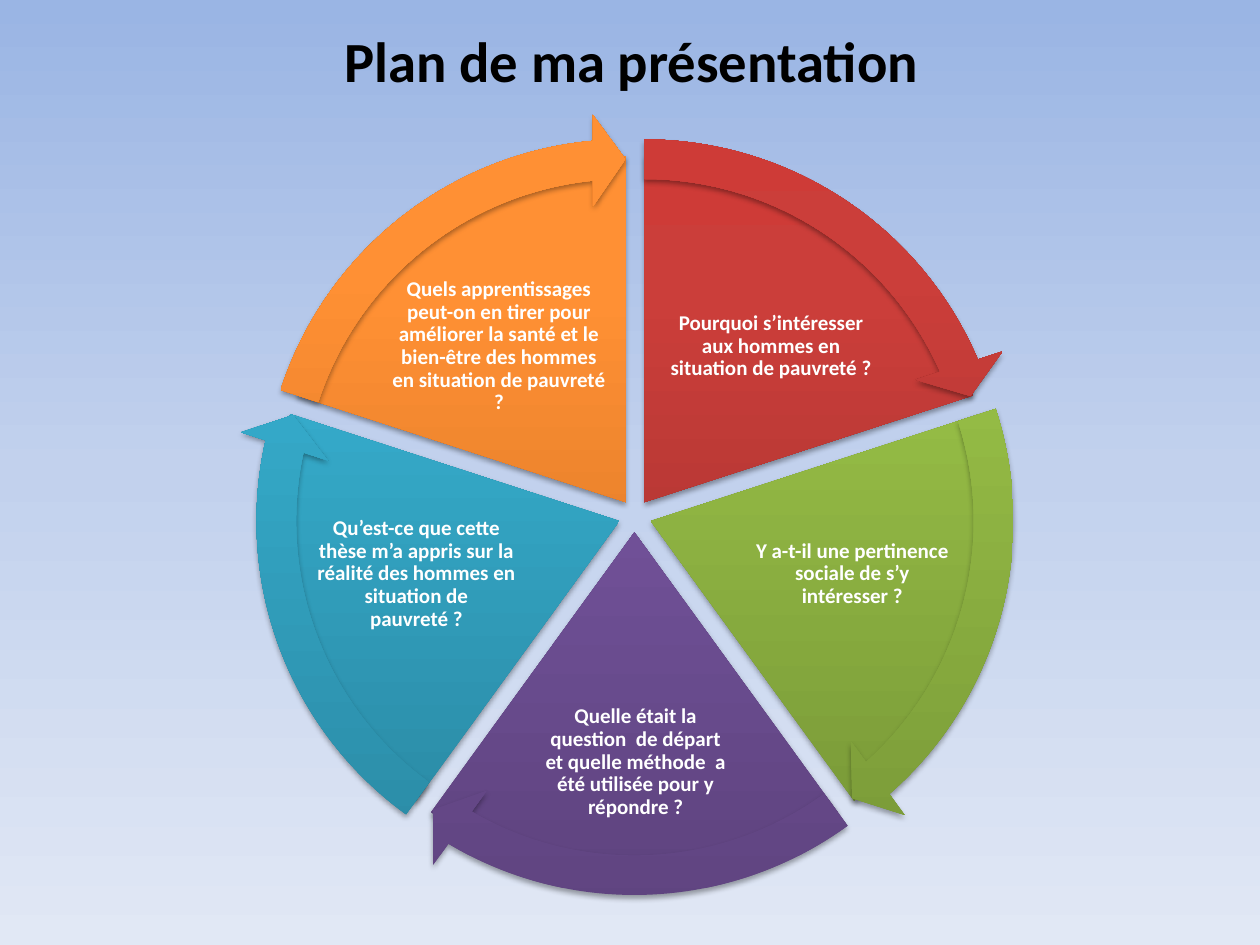
from lxml.etree import SubElement
from pptx import Presentation
from pptx.dml.color import RGBColor
from pptx.enum.shapes import MSO_SHAPE
from pptx.enum.text import MSO_ANCHOR, MSO_AUTO_SIZE, PP_ALIGN
from pptx.oxml.ns import qn
from pptx.util import Inches, Pt

COLORS = {"title": "000000", "label": "FFFFFF", "shadow": "000000"}
GRADIENTS = {
    "background": [(0, "9AB5E4"), (50, "C2D1ED"), (100, "E1E8F5")],
    "red": [(0, "9C2F2D"), (80, "CB3E3A"), (100, "CE3B37")],
    "green": [(0, "779737"), (80, "9BC348"), (100, "9DC746")],
    "purple": [(0, "5F4480"), (80, "7B58A6"), (100, "7C57A8")],
    "blue": [(0, "2A88A2"), (80, "37B1D2"), (100, "34B4D6")],
    "orange": [(0, "CC6E20"), (80, "FF9034"), (100, "FF9136")],
}

# Adjustment values count degrees times 0.6, so a full turn is 216.
FULL_TURN = 216
SWEEP = FULL_TURN / 5
TOP_ANGLE = 162
PIE_SIZE = 5.49
ARROW_SIZE = 6.17
ARROW_MARGIN = (ARROW_SIZE - PIE_SIZE) / 2
HEAD_ANGLE = 3.275

# Gradient, wedge position, label box, label
STEPS = [
    ("red", (2.37, 1.24), (5.24, 2.16, 1.76, 1.18),
     "Pourquoi s’intéresser aux hommes en situation de pauvreté ?"),
    ("green", (2.42, 1.39), (5.95, 3.9, 1.63, 1.31),
     "Y a-t-il une pertinence sociale de s’y intéresser ?"),
    ("purple", (2.29, 1.48), (4.26, 5.33, 1.57, 1.44),
     "Quelle était la question  de départ et quelle méthode  a été "
     "utilisée pour y répondre ?"),
    ("blue", (2.17, 1.39), (2.49, 3.9, 1.63, 1.31),
     "Qu’est-ce que cette thèse m’a appris sur la réalité des hommes en "
     "situation de pauvreté ?"),
    ("orange", (2.22, 1.24), (3.08, 2.16, 1.76, 1.18),
     "Quels apprentissages peut-on en tirer pour améliorer la santé et le "
     "bien-être des hommes en situation de pauvreté ?"),
]


def set_gradient(fill, element, stops, angle):
    """Fill with a linear gradient; angle is counter-clockwise."""
    fill.gradient()
    fill.gradient_angle = angle
    stop_list = element.find(".//" + qn("a:gsLst"))
    stop_list.clear()
    for position, color in stops:
        stop = SubElement(stop_list, qn("a:gs"), pos=str(position * 1000))
        SubElement(stop, qn("a:srgbClr"), val=color)


def write_text(shape, text, *, size, color, spacing=1.0, inset=None):
    frame = shape.text_frame
    frame.word_wrap = True
    frame.auto_size = MSO_AUTO_SIZE.NONE
    frame.vertical_anchor = MSO_ANCHOR.MIDDLE
    if inset is not None:
        frame.margin_left = frame.margin_right = Inches(inset)
        frame.margin_top = frame.margin_bottom = Inches(inset)
    para = frame.paragraphs[0]
    para.alignment = PP_ALIGN.CENTER
    para.line_spacing = spacing
    span = para.add_run()
    span.text = text
    span.font.name = "Calibri"
    span.font.size = Pt(size)
    span.font.bold = True
    span.font.color.rgb = RGBColor.from_string(color)


deck = Presentation()
deck.slide_width, deck.slide_height = Inches(10), Inches(7.5)
page = deck.slides.add_slide(deck.slide_layouts[5])
set_gradient(page.background.fill, page.element, GRADIENTS["background"], 270)

title = page.shapes.title
title.left, title.top = Inches(0.51), Inches(0.13)
title.width, title.height = Inches(9), Inches(0.69)
write_text(title, "Plan de ma présentation", size=32.4, color=COLORS["title"])

colored_shapes = []
for index, (color, (left, top), label_box, label) in enumerate(STEPS):
    start = (TOP_ANGLE + index * SWEEP) % FULL_TURN
    wedge = page.shapes.add_shape(MSO_SHAPE.PIE, Inches(left), Inches(top),
                                  Inches(PIE_SIZE), Inches(PIE_SIZE))
    wedge.adjustments[0] = start
    wedge.adjustments[1] = (start + SWEEP) % FULL_TURN
    colored_shapes.append((wedge, color))
    box = page.shapes.add_textbox(*map(Inches, label_box))
    write_text(box, label, size=12, color=COLORS["label"], spacing=0.9, inset=0.02)

for index, (color, (left, top), _, _) in enumerate(STEPS):
    start = (TOP_ANGLE + index * SWEEP) % FULL_TURN
    end = (start + SWEEP - HEAD_ANGLE) % FULL_TURN
    arrow = page.shapes.add_shape(
        MSO_SHAPE.CIRCULAR_ARROW, Inches(left - ARROW_MARGIN),
        Inches(top - ARROW_MARGIN), Inches(ARROW_SIZE), Inches(ARROW_SIZE))
    for number, value in enumerate((0.051, HEAD_ANGLE, end, start, 0.059)):
        arrow.adjustments[number] = value
    colored_shapes.append((arrow, color))

for shape, color in colored_shapes:
    set_gradient(shape.fill, shape.element, GRADIENTS[color], 90)
    shape.line.fill.background()
    shape.shadow.inherit = False
    effects = shape.element.spPr.find(qn("a:effectLst"))
    shadow = SubElement(effects, qn("a:outerShdw"), blurRad=str(Pt(3.1)),
                        dist=str(Pt(1.8)), dir="5400000", rotWithShape="0")
    shadow_color = SubElement(shadow, qn("a:srgbClr"), val=COLORS["shadow"])
    SubElement(shadow_color, qn("a:alpha"), val="35000")

deck.save("out.pptx")
